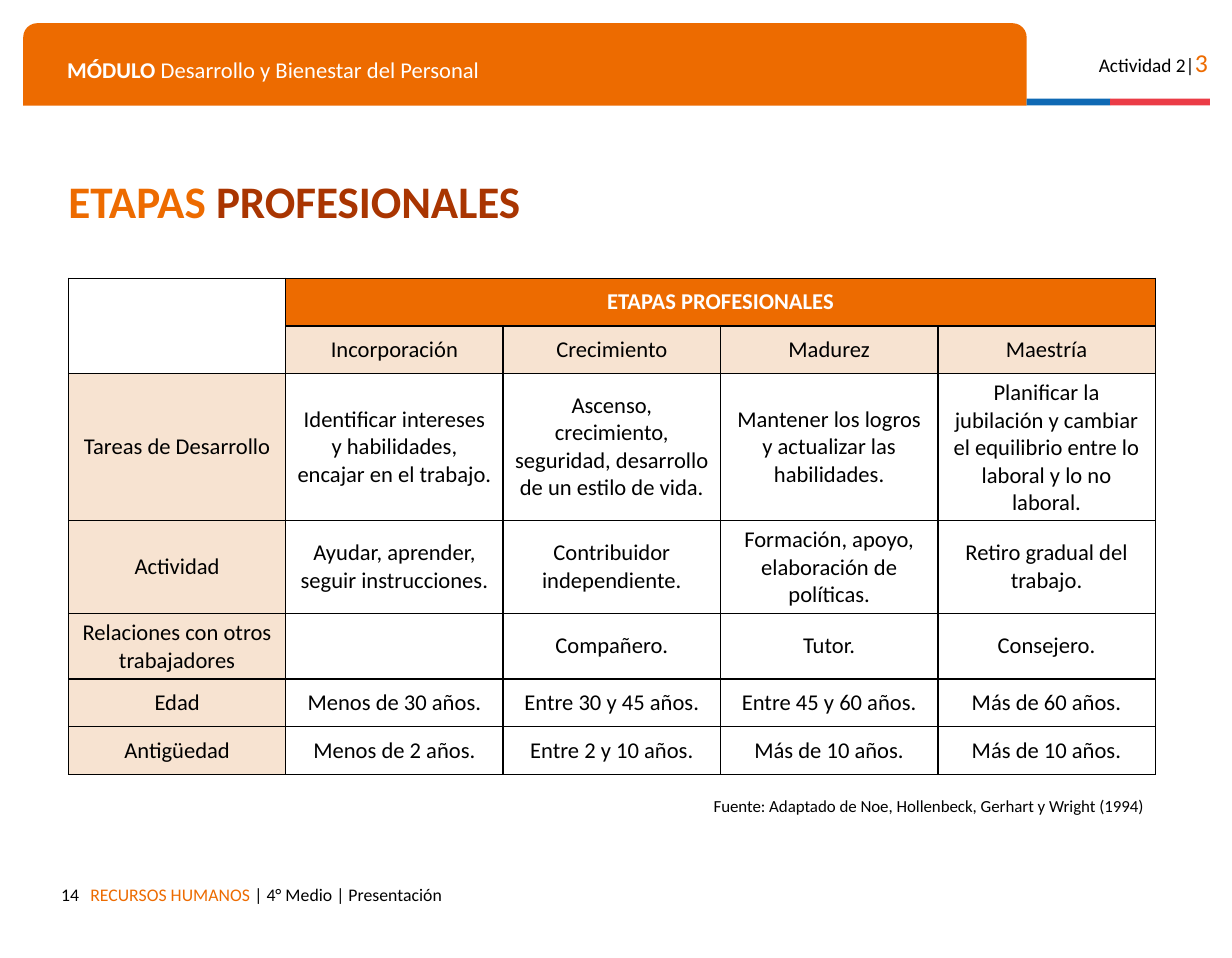
from lxml import etree
from pptx import Presentation
from pptx.dml.color import RGBColor
from pptx.enum.shapes import MSO_SHAPE
from pptx.enum.text import MSO_ANCHOR, PP_ALIGN
from pptx.oxml.ns import qn
from pptx.util import Inches, Pt

RECTANGLE, ROUND_TOP = MSO_SHAPE.RECTANGLE, MSO_SHAPE.ROUND_2_SAME_RECTANGLE
LEFT, CENTER, RIGHT = PP_ALIGN.LEFT, PP_ALIGN.CENTER, PP_ALIGN.RIGHT
TOP, MIDDLE = MSO_ANCHOR.TOP, MSO_ANCHOR.MIDDLE
ORANGE = RGBColor(0xED, 0x6B, 0x00)
BROWN = RGBColor(0xA9, 0x35, 0x01)
PEACH = RGBColor(0xF7, 0xE3, 0xD1)
BLUE = RGBColor(0x0F, 0x69, 0xB4)
RED = RGBColor(0xEB, 0x3C, 0x46)
BLACK = RGBColor(0, 0, 0)
WHITE = RGBColor(255, 255, 255)

# shape, (left, top, width, height), fill
BANNER = [
    (ROUND_TOP, (0.2, 0.2, 8.65, 0.71), ORANGE),
    (RECTANGLE, (8.85, 0.85, 0.72, 0.06), BLUE),
    (RECTANGLE, (9.57, 0.85, 0.86, 0.06), RED),
]

# (left, top, width, height), format, spans of (text, size, color, bold)
TEXTS = [
    ((9.23, 0.3, 1.28, 0.43), {"align": RIGHT},
     [("Actividad 2|", 12, BLACK, False), ("3", 16, ORANGE, False)]),
    ((0.68, 7.53, 7.15, 0.35), {},
     [("RECURSOS HUMANOS ", 11, ORANGE, False),
      ("| 4° Medio | Presentación", 11, BLACK, False)]),
    ((0.48, 0.38, 8.14, 0.41), {},
     [("MÓDULO", 14, WHITE, True),
      (" Desarrollo y Bienestar del Personal", 14, WHITE, False)]),
    ((0.41, 7.53, 0.37, 0.35), {"align": RIGHT}, [("14", 11, BLACK, False)]),
    ((0.49, 1.48, 7.09, 0.59), {"anchor": MIDDLE, "spacing": 0.8},
     [("ETAPAS ", 28, ORANGE, True), ("PROFESIONALES", 28, BROWN, True)]),
    ((3.58, 6.81, 6.38, 0.28), {"align": RIGHT, "inset": 0.05},
     [("Fuente: Adaptado de Noe, Hollenbeck, Gerhart y Wright (1994)",
       10.5, BLACK, False)]),
]

STAGES = [
    ["", "ETAPAS PROFESIONALES", "", "", ""],
    ["", "Incorporación", "Crecimiento", "Madurez", "Maestría"],
    ["Tareas de Desarrollo",
     "Identificar intereses y habilidades, encajar en el trabajo.",
     "Ascenso, crecimiento, seguridad, desarrollo de un estilo de vida.",
     "Mantener los logros y actualizar las habilidades.",
     "Planificar la jubilación y cambiar el equilibrio entre lo laboral y lo no laboral."],
    ["Actividad", "Ayudar, aprender, seguir instrucciones.",
     "Contribuidor independiente.",
     "Formación, apoyo, elaboración de políticas.",
     "Retiro gradual del trabajo."],
    ["Relaciones con otros trabajadores", "", "Compañero.", "Tutor.", "Consejero."],
    ["Edad", "Menos de 30 años.", "Entre 30 y 45 años.",
     "Entre 45 y 60 años.", "Más de 60 años."],
    ["Antigüedad", "Menos de 2 años.", "Entre 2 y 10 años.",
     "Más de 10 años.", "Más de 10 años."],
]
ROW_HEIGHTS = [0.41, 0.41, 1.26, 0.8, 0.56, 0.41, 0.41]
TABLE_LEFT, TABLE_TOP, TABLE_WIDTH = 0.59, 2.4, 9.37


def add_spans(para, spans):
    for text, size, color, bold in spans:
        span = para.add_run()
        span.text = text
        for name, value in {"name": "Calibri", "size": Pt(size), "bold": bold}.items():
            setattr(span.font, name, value)
        span.font.color.rgb = color


def add_banner_part(page, preset, place, color):
    shape = page.shapes.add_shape(preset, *map(Inches, place))
    shape.shadow.inherit = False
    shape.fill.solid()
    shape.fill.fore_color.rgb = color
    shape.line.fill.background()
    if preset == ROUND_TOP:
        shape.adjustments[0] = 0.17


def add_text(page, place, spans, align=LEFT, anchor=TOP, spacing=None, inset=0.1):
    frame = page.shapes.add_textbox(*map(Inches, place)).text_frame
    settings = {"word_wrap": True, "vertical_anchor": anchor,
                "margin_left": Inches(0.1), "margin_right": Inches(0.1),
                "margin_top": Inches(inset), "margin_bottom": Inches(inset)}
    for name, value in settings.items():
        setattr(frame, name, value)
    para = frame.paragraphs[0]
    para.alignment = align
    para.line_spacing = spacing
    add_spans(para, spans)


def add_borders(cell):
    """Draw a thin black line on all four sides of a cell."""
    properties = cell._tc.get_or_add_tcPr()
    for index, side in enumerate(("a:lnL", "a:lnR", "a:lnT", "a:lnB")):
        line = etree.Element(qn(side), w=str(Pt(1)))
        fill = etree.SubElement(line, qn("a:solidFill"))
        etree.SubElement(fill, qn("a:srgbClr"), val=str(BLACK))
        properties.insert(index, line)


def add_stage_table(page):
    place = (TABLE_LEFT, TABLE_TOP, TABLE_WIDTH, sum(ROW_HEIGHTS))
    table = page.shapes.add_table(
        len(STAGES), len(STAGES[0]), *map(Inches, place)).table
    table.first_row = table.horz_banding = False
    for column in table.columns:
        column.width = Inches(TABLE_WIDTH / len(STAGES[0]))
    for row, height in zip(table.rows, ROW_HEIGHTS):
        row.height = Inches(height)
    for r, texts in enumerate(STAGES):
        for c, text in enumerate(texts):
            cell = table.cell(r, c)
            heading = r == 0 and c > 0
            label = (r == 1 and c > 0) or (r > 1 and c == 0)
            if heading or label:
                cell.fill.solid()
                cell.fill.fore_color.rgb = ORANGE if heading else PEACH
            else:
                cell.fill.background()
            cell.vertical_anchor = MIDDLE
            add_borders(cell)
            if text:
                para = cell.text_frame.paragraphs[0]
                para.alignment = CENTER
                add_spans(para, [(text, 14, WHITE if heading else BLACK, heading)])
    table.cell(0, 0).merge(table.cell(1, 0))
    table.cell(0, 1).merge(table.cell(0, 4))


def main():
    deck = Presentation()
    deck.slide_width, deck.slide_height = Inches(10.62), Inches(8.26)
    page = deck.slides.add_slide(deck.slide_layouts[6])
    for preset, place, color in BANNER:
        add_banner_part(page, preset, place, color)
    for place, settings, spans in TEXTS:
        add_text(page, place, spans, **settings)
    add_stage_table(page)
    deck.save("out.pptx")


if __name__ == "__main__":
    main()
